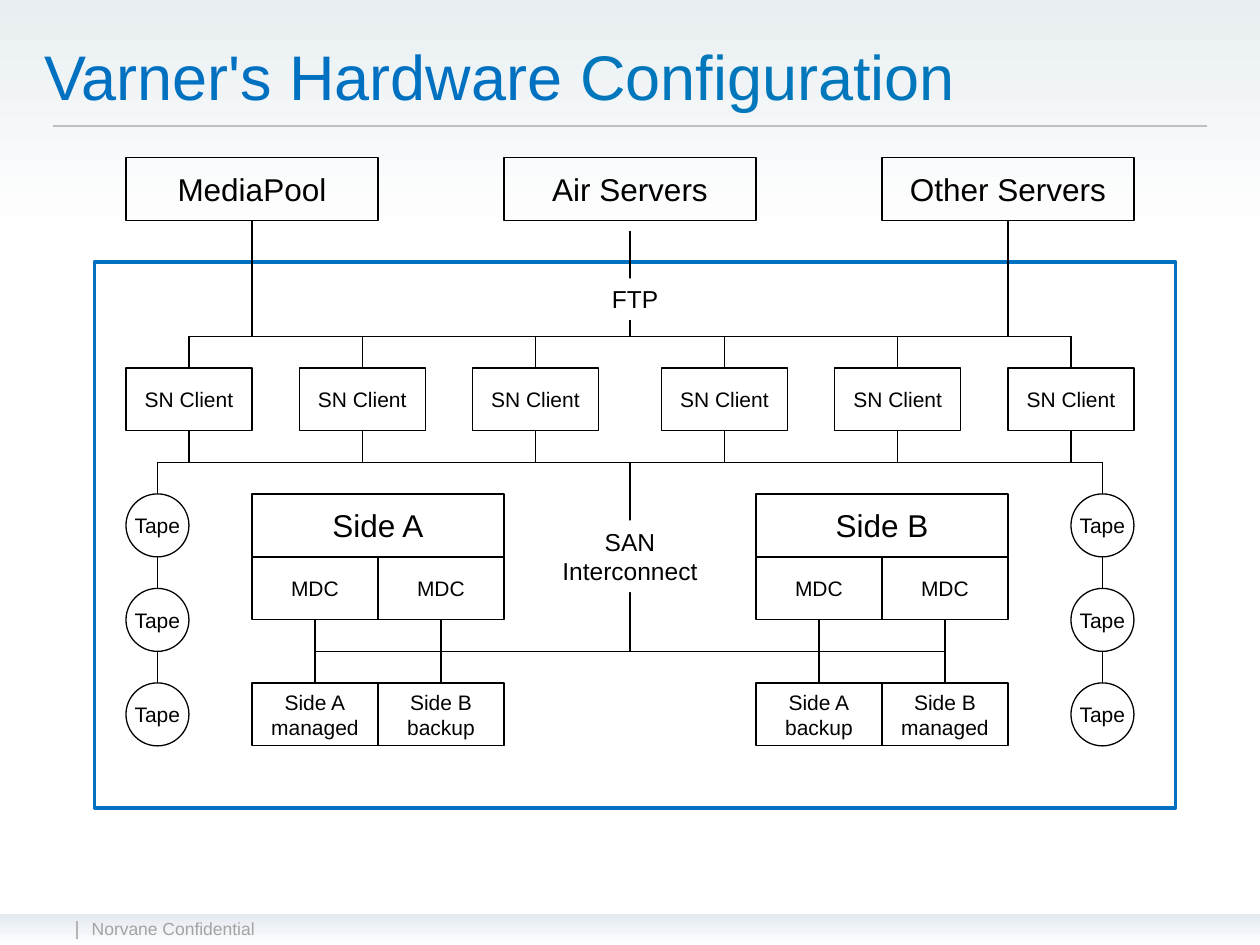
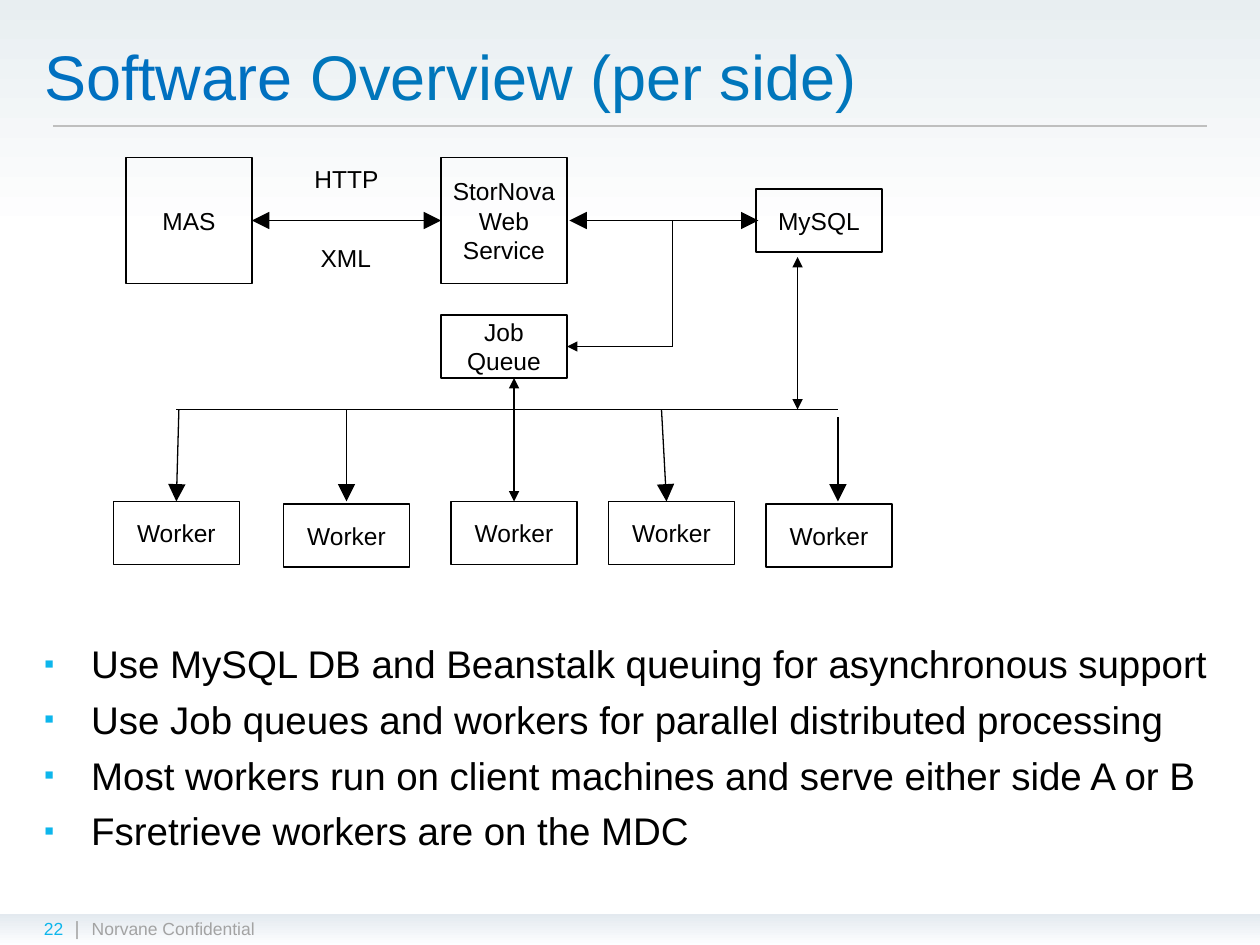
"""Build two slides on a hardware configuration and its software overview."""
from lxml import etree
from pptx import Presentation
from pptx.dml.color import RGBColor
from pptx.enum.shapes import MSO_CONNECTOR, MSO_SHAPE
from pptx.enum.text import MSO_ANCHOR, MSO_AUTO_SIZE, PP_ALIGN
from pptx.oxml.ns import qn
from pptx.util import Cm, Pt

RECT, OVAL = MSO_SHAPE.RECTANGLE, MSO_SHAPE.OVAL
LINE = MSO_CONNECTOR.STRAIGHT
LEFT, CENTER = PP_ALIGN.LEFT, PP_ALIGN.CENTER
TOP, MIDDLE = MSO_ANCHOR.TOP, MSO_ANCHOR.MIDDLE
NO_FIT = MSO_AUTO_SIZE.NONE

FONT = "Arial"
UNIT = 2.54
COLORS = {
    "ink": "000000", "white": "FFFFFF", "title": "0070C0", "title_end": "0076BB",
    "accent": "0DB6EC", "gray": "A3A3A3", "rule": "BFBFBF",
    "sky": "E8EEF1", "band": "E3E9EF", "band_end": "FDFEFF",
}
TIGHT = dict(margin_left=0, margin_right=0, margin_top=0, margin_bottom=0,
             word_wrap=False, vertical_anchor=MIDDLE)

GRADIENTS = [
    ((0, 0, 10, 7.5), "sky", "white", 0.25),
    ((0, 7.25, 10, 0.25), "band", "band_end", 1),
]
FOOTERS = [
    ("Norvane Confidential", (0.63, 7.24, 5, 0.3), 10),
    ("|", (0.5, 7.22, 0.19, 0.27), 11),
]
RULE = (0.42, 1, 9.58, 1)
TITLE_AT = (0.25, 0.25, 8.5, 0.7)

HARDWARE_TITLE = ("Varner's Hardware ", "Configuration")
FRAME_AT = (0.75, 2.08, 8.58, 4.33)
SERVERS = [("MediaPool", 1), ("Air Servers", 4), ("Other Servers", 7)]
CLIENT_XS = [start + 1.375 * i for start in (1, 5.25) for i in range(3)]
CLIENT_Y, FTP_BUS_Y, SAN_BUS_Y, DISK_BUS_Y = 2.92, 2.67, 3.67, 5.17
SIDES = [
    ("Side A", 2, ["Side A\nmanaged", "Side B\nbackup"]),
    ("Side B", 6, ["Side A\nbackup", "Side B\nmanaged"]),
]
SIDE_Y, MDC_Y, DISK_Y = 3.92, 4.42, 5.42
TAPE_XS, TAPE_STEP = (1, 8.5), 0.75
BUS_LABELS = [("FTP", (4.54, 2.21, 1, 0.33)),
              ("SAN\nInterconnect", (4.25, 4.13, 1.5, 0.57))]

SOFTWARE_TITLE = ("Software ", "Overview (per side)")
SERVICES = [
    ("MAS", (1, 1.25, 1, 1)),
    ("StorNova\nWeb\nService", (3.5, 1.25, 1, 1)),
    ("MySQL", (6, 1.5, 1, 0.5)),
    ("Job\nQueue", (3.5, 2.5, 1, 0.5)),
]
PROTOCOLS = [("HTTP", (2, 1.25, 1.5, 0.33)), ("XML", (2.12, 1.88, 1.25, 0.33))]
WORKERS = [(0.9, 3.98), (2.25, 4), (3.58, 3.98), (4.83, 3.98), (6.08, 4)]
LINKS = [
    ((2, 1.75, 3.5, 1.75), "both", "lg"),
    ((4.52, 1.75, 6.02, 1.75), "both", "lg"),
    ((5.34, 1.75, 5.34, 2.75), None, None),
    ((5.34, 2.75, 4.5, 2.75), "end", "med"),
    ((6.33, 2.04, 6.33, 3.25), "both", "med"),
    ((1.4, 3.25, 6.65, 3.25), None, None),
    ((4.08, 3, 4.08, 3.98), "both", "med"),
    ((1.42, 3.25, 1.4, 3.98), "end", "lg"),
    ((2.75, 3.25, 2.75, 3.98), "end", "lg"),
    ((5.25, 3.25, 5.29, 3.98), "end", "lg"),
    ((6.65, 3.31, 6.65, 3.98), "end", "lg"),
]
BULLETS_AT = (0.25, 5.03, 9.58, 2.1)
BULLETS = [
    "Use MySQL DB and Beanstalk queuing for asynchronous support",
    "Use Job queues and workers for parallel distributed processing",
    "Most workers run on client machines and serve either side A or B",
    "Fsretrieve workers are on the MDC",
]
PAGE_NUMBER = ("22", (0.25, 7.24, 0.51, 0.27), 10)


def grid(*values):
    return [Cm(v * UNIT) for v in values]


def rgb(name):
    return RGBColor.from_string(COLORS[name])


def apply(obj, fmt):
    for name, value in fmt.items():
        setattr(obj, name, value)


def style_run(r, size, color):
    apply(r.font, dict(name=FONT, size=Pt(size)))
    r.font.color.rgb = rgb(color)


def move(sp, at):
    apply(sp, dict(zip(("left", "top", "width", "height"), grid(*at))))


def add_box(s, at, text="", size=12, kind=RECT, line="ink", weight=0.75, fill=None):
    sp = s.shapes.add_shape(kind, *grid(*at))
    sp.shadow.inherit = False
    if fill:
        sp.fill.solid()
        sp.fill.fore_color.rgb = rgb(fill)
    else:
        sp.fill.background()
    if line:
        sp.line.color.rgb = rgb(line)
        sp.line.width = Pt(weight)
    else:
        sp.line.fill.background()
    if text:
        tf = sp.text_frame
        tf.text = text
        apply(tf, TIGHT)
        for p in tf.paragraphs:
            p.alignment = CENTER
            style_run(p.runs[0], size, "ink")
    return sp


def add_text(s, text, at, size, color):
    sp = s.shapes.add_textbox(*grid(*at))
    tf = sp.text_frame
    tf.text = text
    tf.word_wrap = len(text) > 2
    style_run(tf.paragraphs[0].runs[0], size, color)
    return sp


def add_line(s, ends, arrows=None, arrow_size="med", color="ink"):
    sp = s.shapes.add_connector(LINE, *grid(*ends))
    sp.line.color.rgb = rgb(color)
    sp.line.width = Pt(0.75)
    spPr = sp.element.spPr
    tags = {"both": ("a:headEnd", "a:tailEnd"), "end": ("a:tailEnd",)}
    for tag in tags.get(arrows, ()):
        etree.SubElement(spPr.find(qn("a:ln")), qn(tag),
                         type="triangle", w=arrow_size, len=arrow_size)
    etree.SubElement(spPr, qn("a:effectLst"))
    return sp


def add_gradient(s, at, start, end, stop):
    sp = add_box(s, at, line=None)
    sp.fill.gradient()
    sp.fill.gradient_angle = 270
    for g, name, position in zip(sp.fill.gradient_stops, (start, end), (0, stop)):
        g.color.rgb = rgb(name)
        g.position = position
    return sp


def dress_master(prs, s):
    parts = [add_gradient(s, *gradient) for gradient in GRADIENTS]
    parts += [add_text(s, *footer, "gray") for footer in FOOTERS]
    parts.append(add_line(s, RULE, color="rule"))
    for i, sp in enumerate(parts):
        sp.element.xpath(".//p:cNvPr")[0].set("id", str(100 + i))
        prs.slide_master.shapes.element.append(sp.element)


def set_title(s, words):
    sp = s.shapes.title
    move(sp, TITLE_AT)
    tf = sp.text_frame
    apply(tf, dict(auto_size=NO_FIT, vertical_anchor=MIDDLE, word_wrap=True))
    p = tf.paragraphs[0]
    p.alignment = LEFT
    for word, color in zip(words, ("title", "title_end")):
        r = p.add_run()
        r.text = word
        style_run(r, 36, color)


def set_bullets(sp, items):
    move(sp, BULLETS_AT)
    tf = sp.text_frame
    apply(tf, dict(auto_size=NO_FIT, vertical_anchor=TOP, word_wrap=True))
    tf.text = "\n".join(items)
    for i, p in enumerate(tf.paragraphs):
        pPr = p._p.get_or_add_pPr()
        pPr.set("marL", str(Cm(0.95)))
        pPr.set("indent", str(-Cm(0.95)))
        color = etree.SubElement(pPr, qn("a:buClr"))
        etree.SubElement(color, qn("a:srgbClr"), val=COLORS["accent"])
        etree.SubElement(pPr, qn("a:buSzPct"), val="75000")
        etree.SubElement(pPr, qn("a:buFont"), typeface=FONT)
        etree.SubElement(pPr, qn("a:buChar"), char="▪")
        p.space_before = Pt(5.5 if i else 0)
        style_run(p.runs[0], 22, "ink")


def draw_hardware(s):
    set_title(s, HARDWARE_TITLE)
    add_box(s, FRAME_AT, line="title", weight=2.25)
    for name, x in SERVERS:
        add_box(s, (x, 1.25, 2, 0.5), name, 18)
        top = 1.83 if x == 4 else 1.75
        add_line(s, (x + 1, top, x + 1, FTP_BUS_Y))
    for x in CLIENT_XS:
        add_box(s, (x, CLIENT_Y, 1, 0.5), "SN Client")
        for y in (FTP_BUS_Y, CLIENT_Y + 0.5):
            add_line(s, (x + 0.5, y, x + 0.5, y + 0.25))
    for name, x, disks in SIDES:
        add_box(s, (x, SIDE_Y, 2, 0.5), name, 18)
        for i, disk in enumerate(disks):
            add_box(s, (x + i, MDC_Y, 1, 0.5), "MDC")
            add_box(s, (x + i, DISK_Y, 1, 0.5), disk)
            add_line(s, (x + i + 0.5, MDC_Y + 0.5, x + i + 0.5, DISK_Y))
    for x in TAPE_XS:
        for i in range(3):
            y = SIDE_Y + i * TAPE_STEP
            add_line(s, (x + 0.25, y - 0.25, x + 0.25, y))
            add_box(s, (x, y, 0.5, 0.5), "Tape", kind=OVAL)
    for left, right, y in ((1.5, 8.5, FTP_BUS_Y), (1.25, 8.75, SAN_BUS_Y),
                           (2.5, 7.5, DISK_BUS_Y)):
        add_line(s, (left, y, right, y))
    add_line(s, (5, SAN_BUS_Y, 5, DISK_BUS_Y))
    for text, at in BUS_LABELS:
        add_box(s, at, text, 14, line=None, fill="white")


def draw_software(s):
    set_title(s, SOFTWARE_TITLE)
    set_bullets(s.placeholders[1], BULLETS)
    add_text(s, *PAGE_NUMBER, "accent")
    for text, at in SERVICES:
        add_box(s, at, text, 14)
    for text, at in PROTOCOLS:
        add_box(s, at, text, 14, line=None)
    for x, y in WORKERS:
        add_box(s, (x, y, 1, 0.5), "Worker", 14)
    for link in LINKS:
        add_line(s, *link)


def main():
    prs = Presentation()
    prs.slide_width, prs.slide_height = Cm(25.4), Cm(19.05)
    hardware = prs.slides.add_slide(prs.slide_layouts[5])
    dress_master(prs, hardware)
    draw_hardware(hardware)
    draw_software(prs.slides.add_slide(prs.slide_layouts[1]))
    prs.save("out.pptx")


if __name__ == "__main__":
    main()
